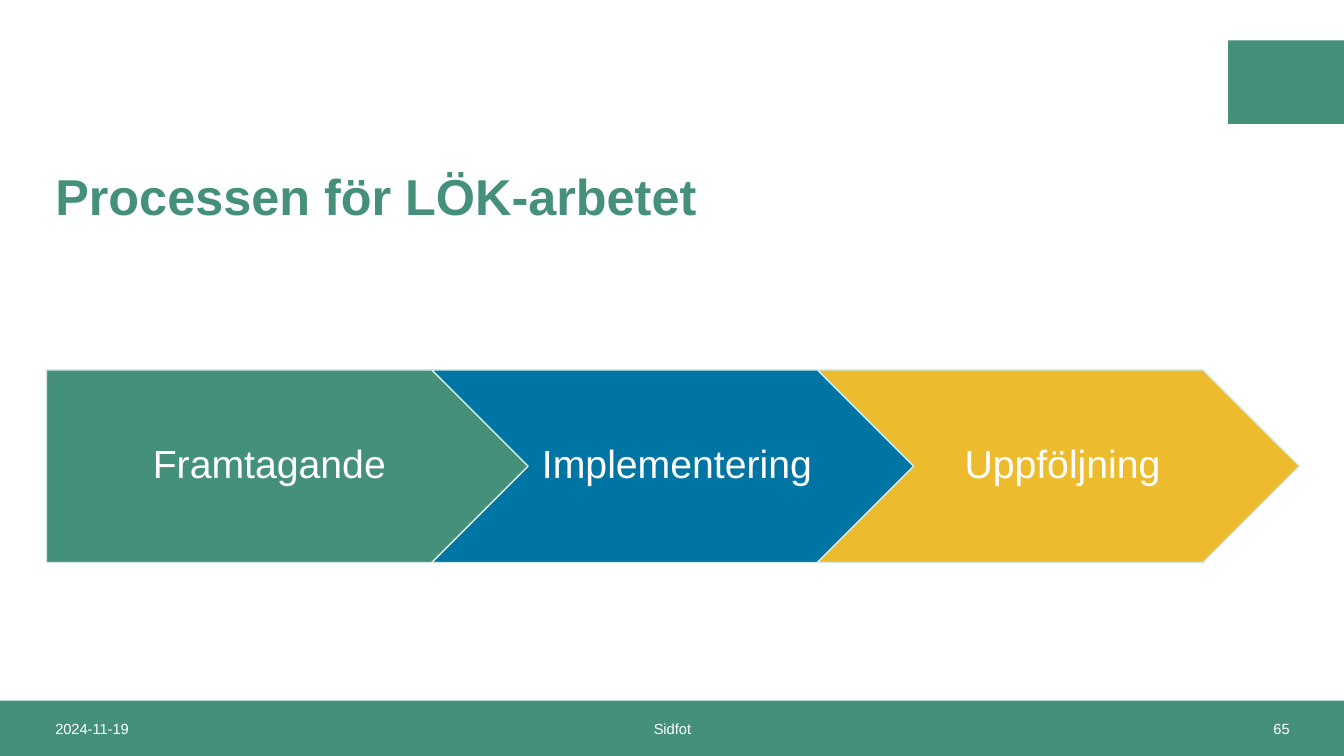
from dataclasses import dataclass

from pptx import Presentation
from pptx.dml.color import RGBColor
from pptx.enum.shapes import MSO_SHAPE
from pptx.enum.text import MSO_ANCHOR, PP_ALIGN
from pptx.util import Inches, Pt

RECT = MSO_SHAPE.RECTANGLE
PLATE = MSO_SHAPE.PENTAGON
CHEVRON = MSO_SHAPE.CHEVRON
MIDDLE = MSO_ANCHOR.MIDDLE
LEFT, CENTER, RIGHT = PP_ALIGN.LEFT, PP_ALIGN.CENTER, PP_ALIGN.RIGHT


@dataclass(frozen=True)
class Theme:
    font: str = "Arial"
    green: str = "45907A"
    blue: str = "0074A2"
    gold: str = "EDBC2E"
    pale: str = "D5EAE6"
    white: str = "FFFFFF"
    title: float = 36
    step: float = 28
    foot: float = 10.5


THEME = Theme()


def write(shape, text, size, color, align=LEFT, bold=False, space=1.0,
          inset=(0.1, 0.05, 0.1, 0.05)):
    frame = shape.text_frame
    frame.word_wrap = True
    frame.vertical_anchor = MIDDLE
    (frame.margin_left, frame.margin_top,
     frame.margin_right, frame.margin_bottom) = map(Inches, inset)
    para = frame.paragraphs[0]
    para.alignment = align
    para.line_spacing = space
    run = para.add_run()
    run.text = text
    run.font.name = THEME.font
    run.font.size = Pt(size)
    run.font.bold = bold
    run.font.color.rgb = RGBColor.from_string(color)


def add_box(shapes, kind, area, fill, line=None):
    shape = shapes.add_shape(kind, *map(Inches, area))
    shape.shadow.inherit = False
    shape.fill.solid()
    shape.fill.fore_color.rgb = RGBColor.from_string(fill)
    if line:
        shape.line.color.rgb = RGBColor.from_string(line)
        shape.line.width = Pt(1)
    else:
        shape.line.fill.background()
    return shape


def add_label(shapes, area, text, size, color, **style):
    write(shapes.add_textbox(*map(Inches, area)), text, size, color, **style)


def add_flow(shapes, left, top, width, height, steps):
    group = shapes.add_group_shape()
    for index, (text, fill) in enumerate(steps):
        first = index == 0
        area = (left + index * width * 0.8, top, width, height)
        shape = add_box(group.shapes, PLATE if first else CHEVRON, area,
                        fill, THEME.pale)
        write(shape, text, THEME.step, THEME.white, align=CENTER, space=0.9,
              inset=(0.16 if first else 0.12, 0.08, 0.04, 0.08))


def add_footer(shapes, top, height):
    add_box(shapes, RECT, (0, top, 13.33, height), THEME.green)
    for left, width, text, align in (
        (0.45, 3.47, "2024-11-19", LEFT),
        (4.42, 4.5, "Sidfot", CENTER),
        (9.42, 3.47, "65", RIGHT),
    ):
        add_label(shapes, (left, top, width, height), text, THEME.foot,
                  THEME.white, align=align)


def main():
    deck = Presentation()
    deck.slide_width = Inches(13.33)
    deck.slide_height = Inches(7.5)
    shapes = deck.slides.add_slide(deck.slide_layouts[6]).shapes
    add_box(shapes, RECT, (12.18, 0.4, 1.15, 0.83), THEME.green)
    add_flow(shapes, 0.46, 3.67, 4.78, 1.91, (
        ("Framtagande", THEME.green),
        ("Implementering", THEME.blue),
        ("Uppföljning", THEME.gold),
    ))
    add_footer(shapes, 6.95, 0.55)
    add_label(shapes, (0.45, 1.32, 11.39, 1.32), "Processen för LÖK-arbetet",
              THEME.title, THEME.green, bold=True, space=0.9)
    deck.save("out.pptx")


if __name__ == "__main__":
    main()
